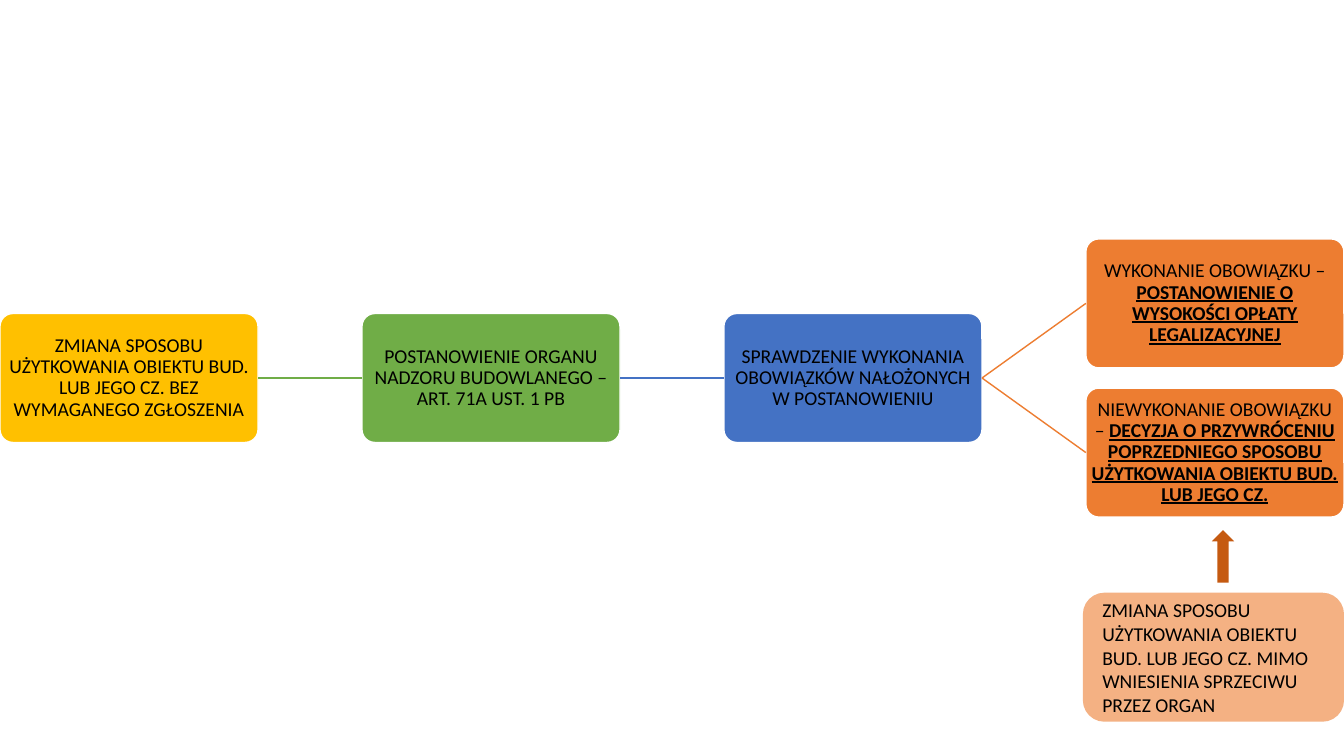
from dataclasses import dataclass

from lxml.etree import SubElement
from pptx import Presentation
from pptx.dml.color import RGBColor
from pptx.enum.shapes import MSO_CONNECTOR as Connector, MSO_SHAPE as Shape
from pptx.enum.text import MSO_ANCHOR as Anchor, PP_ALIGN as Align
from pptx.oxml.ns import qn
from pptx.util import Inches, Pt


@dataclass(frozen=True)
class Theme:
    font: str = "Calibri"
    size: float = 14
    line_width: float = 1
    text: str = "000000"
    outline: str = "FFFFFF"
    start: str = "FFC000"
    order: str = "70AD47"
    check: str = "4472C4"
    outcome: str = "ED7D31"
    note: str = "F4B183"
    arrow: str = "C55A11"


THEME = Theme()
NODE_WIDTH, NODE_HEIGHT = 2.56, 1.28
COLUMN_PITCH, ROW_PITCH = 3.59, 1.48

STEPS = [
    ("ZMIANA SPOSOBU UŻYTKOWANIA OBIEKTU BUD. LUB JEGO CZ. BEZ WYMAGANEGO ZGŁOSZENIA", THEME.start),
    ("POSTANOWIENIE ORGANU NADZORU BUDOWLANEGO – ART. 71A UST. 1 PB", THEME.order),
    ("SPRAWDZENIE WYKONANIA OBOWIĄZKÓW NAŁOŻONYCH W POSTANOWIENIU", THEME.check),
]
OUTCOMES = [
    ("WYKONANIE OBOWIĄZKU – ", "POSTANOWIENIE O WYSOKOŚCI OPŁATY LEGALIZACYJNEJ"),
    ("NIEWYKONANIE OBOWIĄZKU – ",
     "DECYZJA O PRZYWRÓCENIU POPRZEDNIEGO SPOSOBU UŻYTKOWANIA OBIEKTU BUD. LUB JEGO CZ."),
]
NOTE = "ZMIANA SPOSOBU UŻYTKOWANIA OBIEKTU BUD. LUB JEGO CZ. MIMO WNIESIENIA SPRZECIWU PRZEZ ORGAN"


def add_filled_shape(slide, kind, box, color):
    shape = slide.shapes.add_shape(kind, *map(Inches, box))
    shape.shadow.inherit = False
    shape.fill.solid()
    shape.fill.fore_color.rgb = RGBColor.from_string(color)
    shape.line.fill.background()
    return shape


def write_text(shape, text, align, side_inset, decision=""):
    frame = shape.text_frame
    frame.word_wrap = True
    frame.vertical_anchor = Anchor.MIDDLE
    frame.margin_left = frame.margin_right = Inches(side_inset)
    frame.margin_top = frame.margin_bottom = Inches(0.01)
    paragraph = frame.paragraphs[0]
    paragraph.alignment = align
    paragraph.font.name = THEME.font
    paragraph.font.size = Pt(THEME.size)
    paragraph.font.color.rgb = RGBColor.from_string(THEME.text)
    paragraph.add_run().text = text
    if decision:
        run = paragraph.add_run()
        run.text = decision
        run.font.bold = run.font.underline = True
    return paragraph


def add_node(slide, left, top, color, text, decision=""):
    node = add_filled_shape(slide, Shape.ROUNDED_RECTANGLE, (left, top, NODE_WIDTH, NODE_HEIGHT), color)
    node.adjustments[0] = 0.1
    node.line.color.rgb = RGBColor.from_string(THEME.outline)
    node.line.width = Pt(THEME.line_width)
    write_text(node, text, Align.CENTER, 0.01, decision).line_spacing = 0.9
    return node


def link(slide, source, target, color):
    connector = slide.shapes.add_connector(Connector.STRAIGHT, 0, 0, 0, 0)
    connector.begin_connect(source, 3)
    connector.end_connect(target, 1)
    connector.line.color.rgb = RGBColor.from_string(color)
    connector.line.width = Pt(THEME.line_width)
    SubElement(connector._element.spPr, qn("a:effectLst"))


def add_procedure(slide, left, top):
    previous = None
    for column, (text, color) in enumerate(STEPS):
        node = add_node(slide, left + column * COLUMN_PITCH, top, color, text)
        if previous is not None:
            link(slide, previous, node, color)
        previous = node
    outcome_left = left + len(STEPS) * COLUMN_PITCH
    for row, (text, decision) in enumerate(OUTCOMES):
        outcome_top = top + (row - 0.5) * ROW_PITCH
        node = add_node(slide, outcome_left, outcome_top, THEME.outcome, text, decision)
        link(slide, previous, node, THEME.outcome)


def add_objection_note(slide, left, top, width, height):
    note = add_filled_shape(slide, Shape.ROUNDED_RECTANGLE, (left, top, width, height), THEME.note)
    write_text(note, NOTE, Align.LEFT, 0.13)
    add_filled_shape(slide, Shape.UP_ARROW, (left + 1.28, top - 0.62, 0.22, 0.52), THEME.arrow)


def main():
    presentation = Presentation()
    presentation.slide_width = Inches(13.33)
    presentation.slide_height = Inches(7.5)
    slide = presentation.slides.add_slide(presentation.slide_layouts[6])
    add_procedure(slide, 0, 3.11)
    add_objection_note(slide, 10.74, 5.88, 2.59, NODE_HEIGHT)
    presentation.save("out.pptx")


if __name__ == "__main__":
    main()
